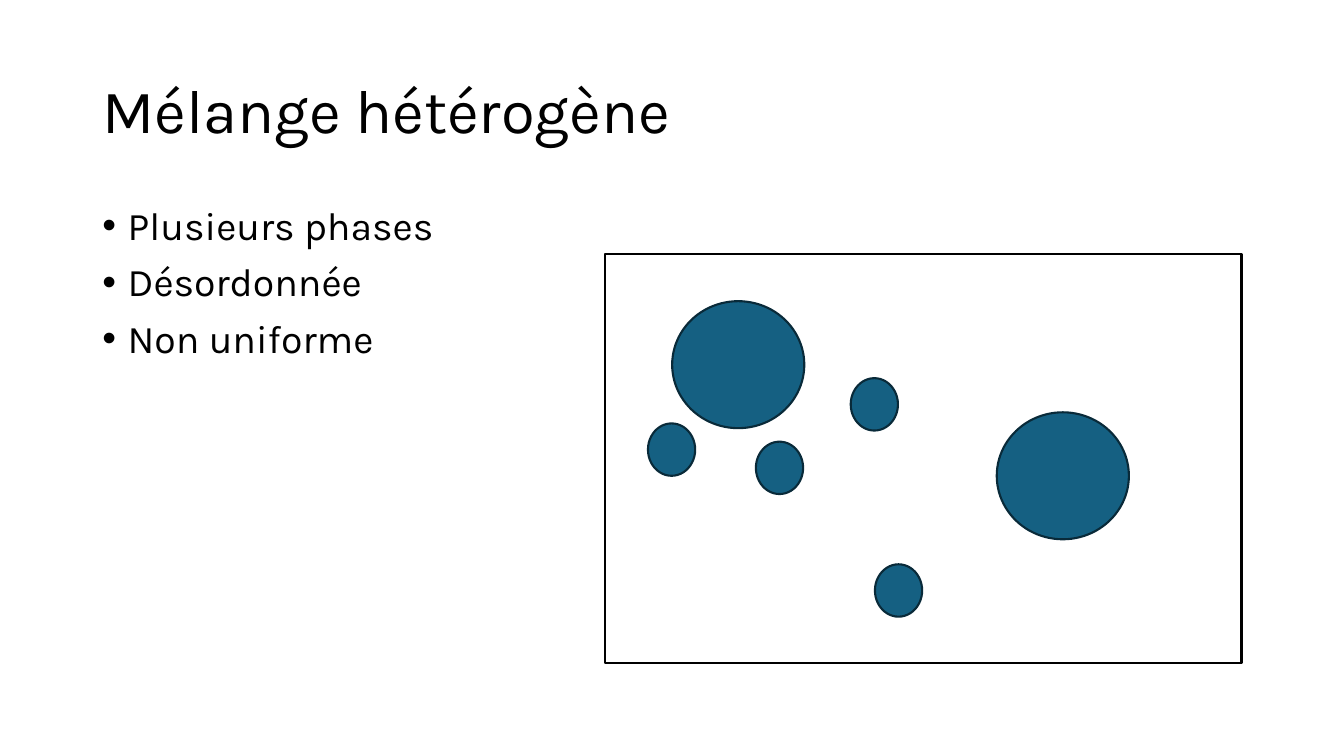
from lxml.etree import SubElement
from pptx import Presentation
from pptx.dml.color import RGBColor
from pptx.enum.shapes import MSO_SHAPE as Shape
from pptx.enum.text import MSO_ANCHOR as Anchor, MSO_AUTO_SIZE as AutoSize, PP_ALIGN as Align
from pptx.oxml.ns import qn
from pptx.util import Cm, Pt

TITLE = "Mélange hétérogène"
PROPERTIES = ["Plusieurs phases", "Désordonnée", "Non uniforme"]

# Centimetres: left, top, width, height
TITLE_BOX = (2.33, 1.02, 29.21, 3.68)
PROPERTIES_BOX = (2.33, 5.08, 29.21, 12.09)
CONTAINER = (15.24, 6.4, 16.05, 10.31)

# Particle size, then the left and top of each particle of that size
PARTICLES = [
    ((3.33, 3.2), [(16.94, 7.59), (25.12, 10.39)]),
    ((1.19, 1.32), [(16.33, 10.67), (19.05, 11.13), (21.44, 9.53), (22.05, 14.22)]),
]

FONT = "Karla"
BLACK, WHITE = "000000", "FFFFFF"
PARTICLE_FILL, PARTICLE_LINE = "156082", "092A39"
BULLET_INDENT = Cm(0.64)


def color(hex_code):
    return RGBColor.from_string(hex_code)


def lengths(box):
    return [Cm(value) for value in box]


def format_paragraph(paragraph, size):
    paragraph.alignment = Align.LEFT
    paragraph.line_spacing = 0.9
    for run in paragraph.runs:
        run.font.name = FONT
        run.font.size = Pt(size)
        run.font.color.rgb = color(BLACK)


def add_bullet(paragraph):
    properties = paragraph._p.get_or_add_pPr()
    properties.set("marL", str(BULLET_INDENT))
    properties.set("indent", str(-BULLET_INDENT))
    SubElement(properties, qn("a:buFont")).set("typeface", "Arial")
    SubElement(properties, qn("a:buChar")).set("char", "•")


def add_outlined(slide, kind, box, fill, line):
    outlined = slide.shapes.add_shape(kind, *lengths(box))
    outlined.shadow.inherit = False
    outlined.fill.solid()
    outlined.fill.fore_color.rgb = color(fill)
    outlined.line.color.rgb = color(line)
    outlined.line.width = Pt(1.5)


def main():
    deck = Presentation()
    deck.slide_width, deck.slide_height = Cm(33.87), Cm(19.05)
    slide = deck.slides.add_slide(deck.slide_layouts[5])

    title = slide.shapes.title
    title.left, title.top, title.width, title.height = lengths(TITLE_BOX)
    title.text_frame.text = TITLE
    title.text_frame.vertical_anchor = Anchor.MIDDLE
    title.text_frame.auto_size = AutoSize.NONE
    format_paragraph(title.text_frame.paragraphs[0], 44)

    properties = slide.shapes.add_textbox(*lengths(PROPERTIES_BOX)).text_frame
    properties.word_wrap = True
    properties.text = "\n".join(PROPERTIES)
    for paragraph in properties.paragraphs:
        format_paragraph(paragraph, 28)
        paragraph.space_before = Pt(10)
        add_bullet(paragraph)

    add_outlined(slide, Shape.RECTANGLE, CONTAINER, WHITE, BLACK)
    for size, corners in PARTICLES:
        for corner in corners:
            add_outlined(slide, Shape.OVAL, corner + size, PARTICLE_FILL, PARTICLE_LINE)

    deck.save("out.pptx")


if __name__ == "__main__":
    main()
